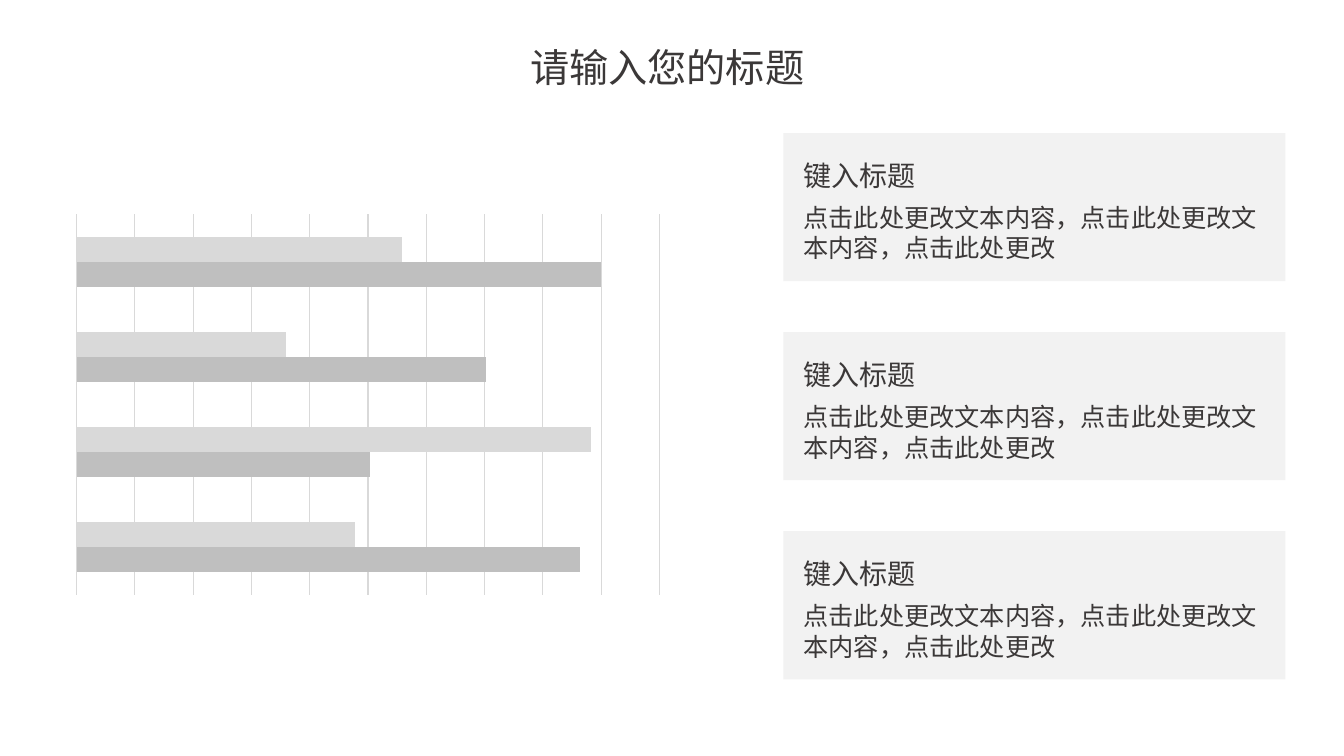
from lxml.etree import SubElement
from pptx import Presentation
from pptx.chart.data import CategoryChartData
from pptx.dml.color import RGBColor
from pptx.enum.chart import XL_CHART_TYPE as ChartType
from pptx.enum.shapes import MSO_SHAPE as Shape
from pptx.enum.text import MSO_AUTO_SIZE as AutoSize
from pptx.oxml.ns import qn
from pptx.util import Inches, Pt

TITLE = "请输入您的标题"
CARDS = [
    ("键入标题", "点击此处更改文本内容，点击此处更改文本内容，点击此处更改"),
    ("键入标题", "点击此处更改文本内容，点击此处更改文本内容，点击此处更改"),
    ("键入标题", "点击此处更改文本内容，点击此处更改文本内容，点击此处更改"),
]
CATEGORIES = ["1", "2", "3", "4"]
SERIES = [
    ("Series 1", (96, 56, 78, 100), "dark_bar"),
    ("Series 2", (53, 98, 40, 62), "light_bar"),
]
GRID_STEP, GRID_COUNT = 11.11, 10
COLORS = {
    "text": "3B3838",
    "card": "F2F2F2",
    "dark_bar": "BFBFBF",
    "light_bar": "D9D9D9",
    "grid": "D9D9D9",
    "label": "000000",
}
FONT = "Noto Sans CJK SC"
CARD_LEFT, CARD_WIDTH, CARD_HEIGHT = 7.77, 4.98, 1.47
FIRST_TOP, LAST_TOP = 1.32, 5.27
PADDING = 0.1


def color(name):
    """Return the named colour."""
    return RGBColor.from_string(COLORS[name])


def add_text(shapes, text, *, at, size, wrap=True, spacing=None):
    """Add one paragraph in a text box."""
    box = shapes.add_textbox(*map(Inches, at))
    frame = box.text_frame
    frame.word_wrap = wrap
    frame.auto_size = AutoSize.SHAPE_TO_FIT_TEXT
    paragraph = frame.paragraphs[0]
    if spacing:
        paragraph.line_spacing = spacing
    run = paragraph.add_run()
    run.text = text
    run.font.size = Pt(size)
    run.font.color.rgb = color("text")
    run.font.name = FONT
    SubElement(run.font._element, qn("a:ea"), typeface=FONT)


def add_bars(slide):
    """Add the clustered bar chart."""
    data = CategoryChartData()
    data.categories = CATEGORIES
    for name, values, _ in SERIES:
        data.add_series(name, values)
    place = map(Inches, (0.64, 2.05, 6.02, 3.93))
    chart = slide.shapes.add_chart(ChartType.BAR_CLUSTERED, *place, data).chart
    chart.has_legend = False
    chart.has_title = False
    chart.font.name = FONT
    chart.font.size = Pt(10)
    chart.font.color.rgb = color("label")
    chart.category_axis.visible = False
    scale = chart.value_axis
    scale.visible = False
    scale.minimum_scale = 0
    scale.maximum_scale = round(GRID_STEP * GRID_COUNT, 2)
    scale.major_unit = GRID_STEP
    scale.has_major_gridlines = True
    grid = scale.major_gridlines.format.line
    grid.color.rgb = color("grid")
    grid.width = Pt(0.75)
    plot = chart.plots[0]
    plot.gap_width = 182
    plot.overlap = 0
    plot.vary_by_categories = False
    for bars, (_, _, fill) in zip(plot.series, SERIES):
        bars.format.fill.solid()
        bars.format.fill.fore_color.rgb = color(fill)


def add_card(slide, top, heading, body):
    """Add a grey card with its heading and body."""
    shapes = slide.shapes.add_group_shape().shapes
    place = map(Inches, (CARD_LEFT, top, CARD_WIDTH, CARD_HEIGHT))
    panel = shapes.add_shape(Shape.RECTANGLE, *place)
    panel.shadow.inherit = False
    panel.fill.solid()
    panel.fill.fore_color.rgb = color("card")
    panel.line.fill.background()
    left = CARD_LEFT + PADDING
    add_text(shapes, heading, at=(left, top + 0.2, 1.32, 0.44), size=20, wrap=False)
    body_width = CARD_WIDTH - 2 * PADDING
    add_text(shapes, body, at=(left, top + 0.64, body_width, 0.71), size=18)


def main():
    """Build and save the slide."""
    deck = Presentation()
    deck.slide_width, deck.slide_height = Inches(13.33), Inches(7.5)
    slide = deck.slides.add_slide(deck.slide_layouts[6])
    add_text(slide.shapes, TITLE, at=(5.16, 0.15, 3.02, 0.81), size=28, spacing=1.5)
    add_bars(slide)
    pitch = (LAST_TOP - FIRST_TOP) / (len(CARDS) - 1)
    for row, (heading, body) in enumerate(CARDS):
        add_card(slide, FIRST_TOP + row * pitch, heading, body)
    deck.save("out.pptx")


if __name__ == "__main__":
    main()
